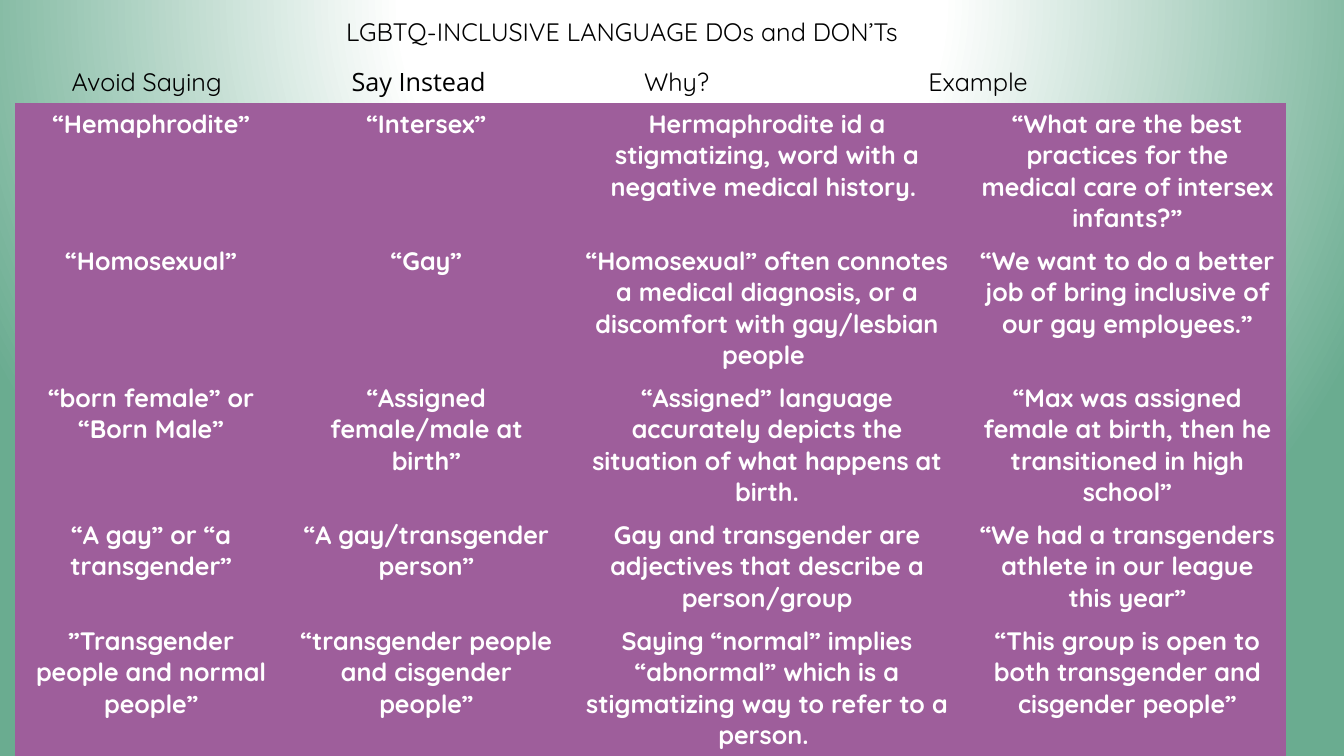
from dataclasses import dataclass

from lxml.etree import SubElement
from pptx import Presentation
from pptx.dml.color import RGBColor
from pptx.enum.text import MSO_ANCHOR, MSO_AUTO_SIZE, PP_ALIGN
from pptx.oxml import parse_xml
from pptx.oxml.ns import nsdecls, qn
from pptx.util import Pt


@dataclass(frozen=True)
class Theme:
    text: RGBColor = RGBColor(0x00, 0x00, 0x00)
    cell_text: RGBColor = RGBColor(0xFF, 0xFF, 0xFF)
    cell_fill: RGBColor = RGBColor(0x9E, 0x5E, 0x9B)
    glow: str = "FFFFFF"
    edge: str = "6AAC90"
    font: str = "Quicksand"
    accent_font: str = "Open Sans"
    size: Pt = Pt(18)


THEME = Theme()
NO_STYLE_NO_GRID = "{2D5ABB26-0587-4C30-8999-92F81FD0307C}"

# Headings with their font and their tab stop in points
HEADINGS = [
    ("Avoid Saying", THEME.font, 0),
    ("Say Instead", THEME.accent_font, 200),
    ("Why?", THEME.font, 409),
    ("Example", THEME.font, 612),
]
COLUMN_WIDTHS = [194.4, 198.7, 288, 226.8]
ROW_HEIGHTS = [97.9, 97.9, 97.9, 75.6, 97.9]
PHRASES = [
    ("“Hemaphrodite”", "“Intersex”",
     "Hermaphrodite id a stigmatizing, word with a negative medical history. ",
     "“What are the best practices for the medical care of intersex infants?”"),
    ("“Homosexual”", "“Gay”",
     "“Homosexual” often connotes a medical diagnosis, or a discomfort with gay/lesbian people ",
     "“We want to do a better job of bring inclusive of our gay employees.”"),
    ("“born female” or “Born Male”", "“Assigned female/male at birth”",
     "“Assigned” language accurately depicts the situation of what happens at birth.",
     "“Max was assigned female at birth, then he transitioned in high school”"),
    ("“A gay” or “a transgender”", "“A gay/transgender person”",
     "Gay and transgender are adjectives that describe a person/group",
     "“We had a transgenders athlete in our league this year”"),
    ("”Transgender people and normal people”", "“transgender people and cisgender people”",
     "Saying “normal” implies “abnormal” which is a stigmatizing way to refer to a person. ",
     "“This group is open to both transgender and cisgender people”"),
]


def style(paragraph, color, bold=False):
    font = paragraph.font
    font.name, font.size, font.bold = THEME.font, THEME.size, bold
    font.color.rgb = color


def paint_background(slide):
    slide.background.fill.gradient()
    gradient = slide.element.xpath(".//p:bgPr/a:gradFill")[0]
    stops = "".join(
        f'<a:gs pos="{percent * 1000}"><a:srgbClr val="{color}"/></a:gs>'
        for percent, color in [(0, THEME.glow), (35, THEME.glow), (100, THEME.edge)]
    )
    radial = parse_xml(
        f'<a:gradFill {nsdecls("a")} rotWithShape="1"><a:gsLst>{stops}</a:gsLst>'
        '<a:path path="circle">'
        '<a:fillToRect l="50000" t="-80000" r="50000" b="180000"/>'
        '</a:path></a:gradFill>'
    )
    gradient.getparent().replace(gradient, radial)


def add_heading(slide, left, top, width, height):
    title = slide.shapes.title
    title.left, title.top, title.width, title.height = map(Pt, (left, top, width, height))
    frame = title.text_frame
    frame.text = "LGBTQ-INCLUSIVE LANGUAGE DOs and DON’Ts"
    frame.auto_size = MSO_AUTO_SIZE.SHAPE_TO_FIT_TEXT
    frame.vertical_anchor = MSO_ANCHOR.TOP
    frame.paragraphs[0].alignment = PP_ALIGN.LEFT
    style(frame.paragraphs[0], THEME.text)


def add_column_headings(slide, left, top, width, height):
    frame = slide.shapes.add_textbox(*map(Pt, (left, top, width, height))).text_frame
    frame.word_wrap = True
    frame.auto_size = MSO_AUTO_SIZE.SHAPE_TO_FIT_TEXT
    line = frame.paragraphs[0]
    tabs = SubElement(line._p.get_or_add_pPr(), qn("a:tabLst"))
    for _, _, stop in HEADINGS[1:]:
        SubElement(tabs, qn("a:tab"), pos=str(Pt(stop)), algn="l")
    style(line, THEME.text)
    for heading, font_name, stop in HEADINGS:
        run = line.add_run()
        run.text = f"\t{heading}" if stop else heading
        if font_name != THEME.font:
            run.font.name = font_name


def add_phrase_table(slide, left, top):
    frame = slide.shapes.add_table(
        len(PHRASES), len(COLUMN_WIDTHS), Pt(left), Pt(top),
        Pt(sum(COLUMN_WIDTHS)), Pt(sum(ROW_HEIGHTS)),
    )
    table = frame.table
    table.first_row = table.horz_banding = False
    frame._element.xpath(".//a:tableStyleId")[0].text = NO_STYLE_NO_GRID
    for column, width in zip(table.columns, COLUMN_WIDTHS):
        column.width = Pt(width)
    for row, height, phrases in zip(table.rows, ROW_HEIGHTS, PHRASES):
        row.height = Pt(height)
        for cell, phrase in zip(row.cells, phrases):
            cell.text = phrase
            cell.fill.solid()
            cell.fill.fore_color.rgb = THEME.cell_fill
            paragraph = cell.text_frame.paragraphs[0]
            paragraph.alignment = PP_ALIGN.CENTER
            style(paragraph, THEME.cell_text, bold=True)


def main():
    deck = Presentation()
    deck.slide_width, deck.slide_height = Pt(960), Pt(540)
    slide = deck.slides.add_slide(deck.slide_layouts.get_by_name("Title Only"))
    paint_background(slide)
    add_heading(slide, 240, 8, 480, 29)
    add_column_headings(slide, 44, 44, 840, 29)
    add_phrase_table(slide, 10.8, 73.5)
    deck.save("out.pptx")


if __name__ == "__main__":
    main()
